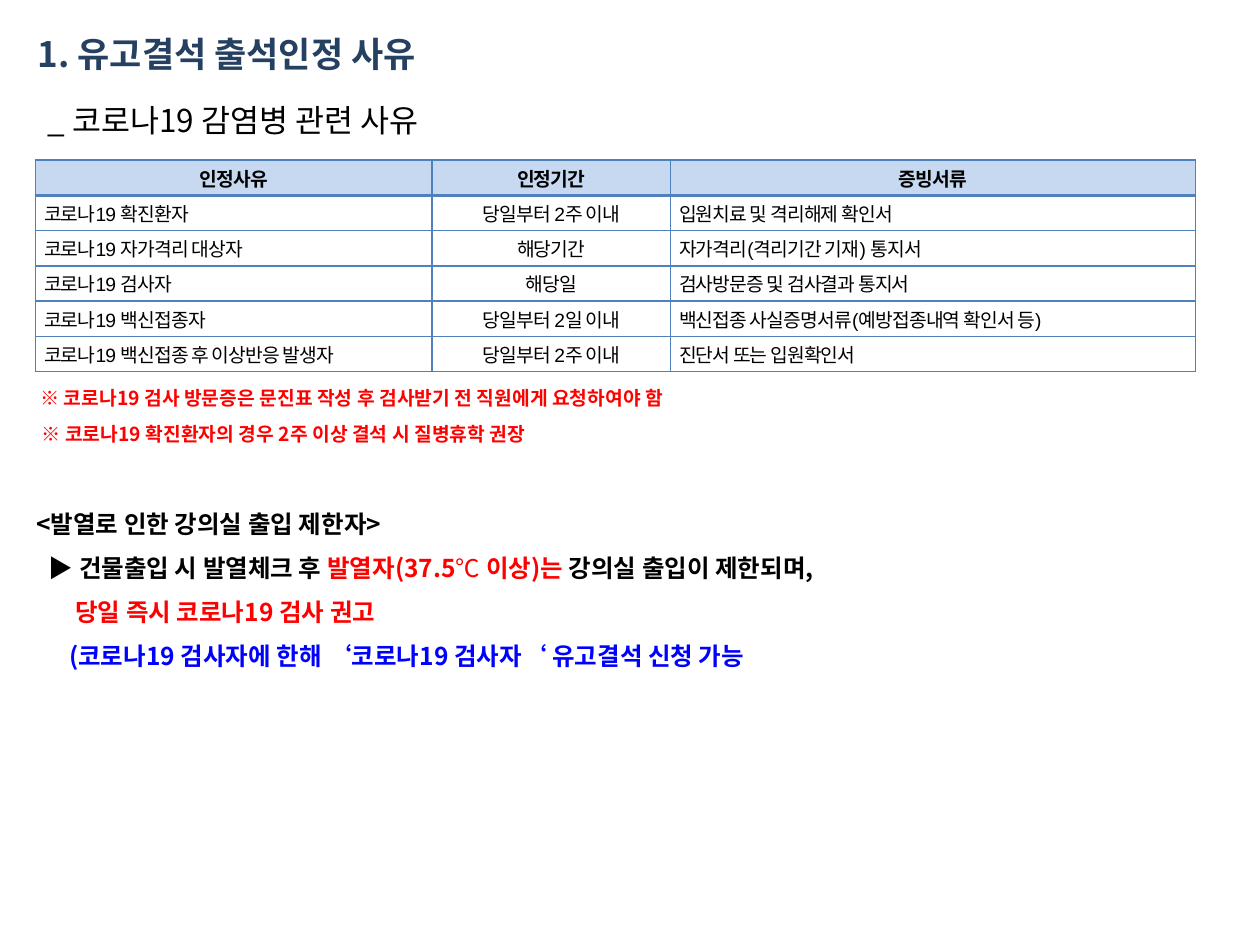
from lxml import etree
from pptx import Presentation
from pptx.dml.color import RGBColor
from pptx.enum.text import MSO_ANCHOR, MSO_AUTO_SIZE, PP_ALIGN
from pptx.oxml.ns import qn
from pptx.util import Inches, Pt

LEFT, CENTER, JUSTIFY = PP_ALIGN.LEFT, PP_ALIGN.CENTER, PP_ALIGN.JUSTIFY
MIDDLE = MSO_ANCHOR.MIDDLE
GROW = MSO_AUTO_SIZE.SHAPE_TO_FIT_TEXT

KOREAN, LATIN = "Noto Sans CJK KR", "Arial"
BLACK, WHITE, NAVY = "000000", "FFFFFF", "254061"
RED, BLUE = "FF0000", "0000FF"
HEADER_FILL, BORDER = "C6D9F1", "4F81BD"

# Content: text, box (left, top, width, height), format
LINES = [
    ("1. 유고결석 출석인정 사유", (0.2, 0.21, 3.54, 0.44),
     dict(size=20, color=NAVY, bold=True)),
    ("_ 코로나19 감염병 관련 사유", (0.28, 0.75, 3.47, 0.4), dict(size=18)),
    ("※ 코로나19 검사 방문증은 문진표 작성 후 검사받기 전 직원에게 요청하여야 함",
     (0.22, 3.02, 6.43, 0.29), dict(size=11, color=RED, bold=True)),
    ("※ 코로나19 확진환자의 경우 2주 이상 결석 시 질병휴학 권장",
     (0.23, 3.3, 4.48, 0.29), dict(size=11, color=RED, bold=True)),
]

TABLE_LEFT, TABLE_TOP, ROW_HEIGHT = 0.28, 1.27, 0.28
COLUMN_WIDTHS = [3.15, 1.89, 4.17]
COLUMN_ALIGNS = [JUSTIFY, CENTER, JUSTIFY]
TABLE_ROWS = [
    ("인정사유", "인정기간", "증빙서류"),
    ("코로나19 확진환자", "당일부터 2주 이내", "입원치료 및 격리해제 확인서"),
    ("코로나19 자가격리 대상자", "해당기간", "자가격리(격리기간 기재) 통지서"),
    ("코로나19 검사자", "해당일", "검사방문증 및 검사결과 통지서"),
    ("코로나19 백신접종자", "당일부터 2일 이내",
     "백신접종 사실증명서류(예방접종내역 확인서 등)"),
    ("코로나19 백신접종 후 이상반응 발생자", "당일부터 2주 이내", "진단서 또는 입원확인서"),
]

# Fever notice: indent in inches, then runs of (text, color, bold)
NOTICE_BOX = (0.19, 3.87, 9.53, 1.51)
NOTICE = [
    (0, [("<발열로 인한 강의실 출입 제한자>", BLACK, True)]),
    (0.1, [("▶ 건물출입 시 발열체크 후 ", BLACK, True), ("발열자(37.5", RED, True),
           ("℃", RED, False), (" 이상)는 ", RED, True),
           ("강의실 출입이 제한되며,", BLACK, True)]),
    (0.31, [("당일 즉시 코로나19 검사 권고", RED, True)]),
    (0.26, [("(코로나19 검사자에 한해 ‘코로나19 검사자‘ 유고결석 신청 가능", BLUE, True)]),
]


def rgb(value):
    return RGBColor.from_string(value)


def add_text(paragraph, text, size=14, color=BLACK, bold=False, font=KOREAN,
             align=LEFT, spacing=None):
    paragraph.alignment = align
    run = paragraph.add_run()
    run.text = text
    run.font.size = Pt(size)
    run.font.bold = bold
    run.font.color.rgb = rgb(color)
    run.font.name = font
    properties = run.font._element
    etree.SubElement(properties, qn("a:ea"), typeface=KOREAN)
    if spacing is not None:
        properties.set("spc", str(round(spacing * 100)))


def add_box(slide, box, wrap):
    frame = slide.shapes.add_textbox(*map(Inches, box)).text_frame
    frame.word_wrap = wrap
    frame.auto_size = GROW
    return frame


def set_borders(cell, widths):
    """Draw cell sides; widths maps L, R, T, B to points."""
    properties = cell._tc.get_or_add_tcPr()
    for index, (side, width) in enumerate(widths.items()):
        line = etree.Element(qn(f"a:ln{side}"), w=str(Pt(width)))
        fill = etree.SubElement(line, qn("a:solidFill"))
        etree.SubElement(fill, qn("a:srgbClr"), val=BORDER)
        properties.insert(index, line)


def add_reason_table(slide):
    table = slide.shapes.add_table(
        len(TABLE_ROWS), len(COLUMN_WIDTHS), Inches(TABLE_LEFT), Inches(TABLE_TOP),
        Inches(sum(COLUMN_WIDTHS)), Inches(ROW_HEIGHT * len(TABLE_ROWS))).table
    for column, width in zip(table.columns, COLUMN_WIDTHS):
        column.width = Inches(width)
    for r, texts in enumerate(TABLE_ROWS):
        table.rows[r].height = Inches(ROW_HEIGHT)
        header = r == 0
        for c, text in enumerate(texts):
            cell = table.cell(r, c)
            cell.vertical_anchor = MIDDLE
            cell.margin_left = cell.margin_right = Inches(0.07)
            cell.margin_top = cell.margin_bottom = Inches(0.02)
            cell.fill.solid()
            cell.fill.fore_color.rgb = rgb(HEADER_FILL if header else WHITE)
            set_borders(cell, dict(L=1, R=1, T=2 if r == 1 else 1,
                                   B=2 if header else 1))
            add_text(cell.text_frame.paragraphs[0], text, size=11, bold=header,
                     font=KOREAN if header else LATIN, spacing=-0.5,
                     align=CENTER if header else COLUMN_ALIGNS[c])


def add_notice(slide):
    frame = add_box(slide, NOTICE_BOX, wrap=True)
    for index, (indent, runs) in enumerate(NOTICE):
        paragraph = frame.add_paragraph() if index else frame.paragraphs[0]
        paragraph.line_spacing = 1.5
        paragraph._p.get_or_add_pPr().set("marL", str(Inches(indent)))
        for text, color, bold in runs:
            add_text(paragraph, text, color=color, bold=bold)


def main():
    presentation = Presentation()
    presentation.slide_width, presentation.slide_height = Inches(10), Inches(7.5)
    slide = presentation.slides.add_slide(presentation.slide_layouts[6])

    # Headings and red remarks
    for text, box, style in LINES:
        add_text(add_box(slide, box, wrap=False).paragraphs[0], text, **style)

    add_reason_table(slide)
    add_notice(slide)
    presentation.save("out.pptx")


if __name__ == "__main__":
    main()
